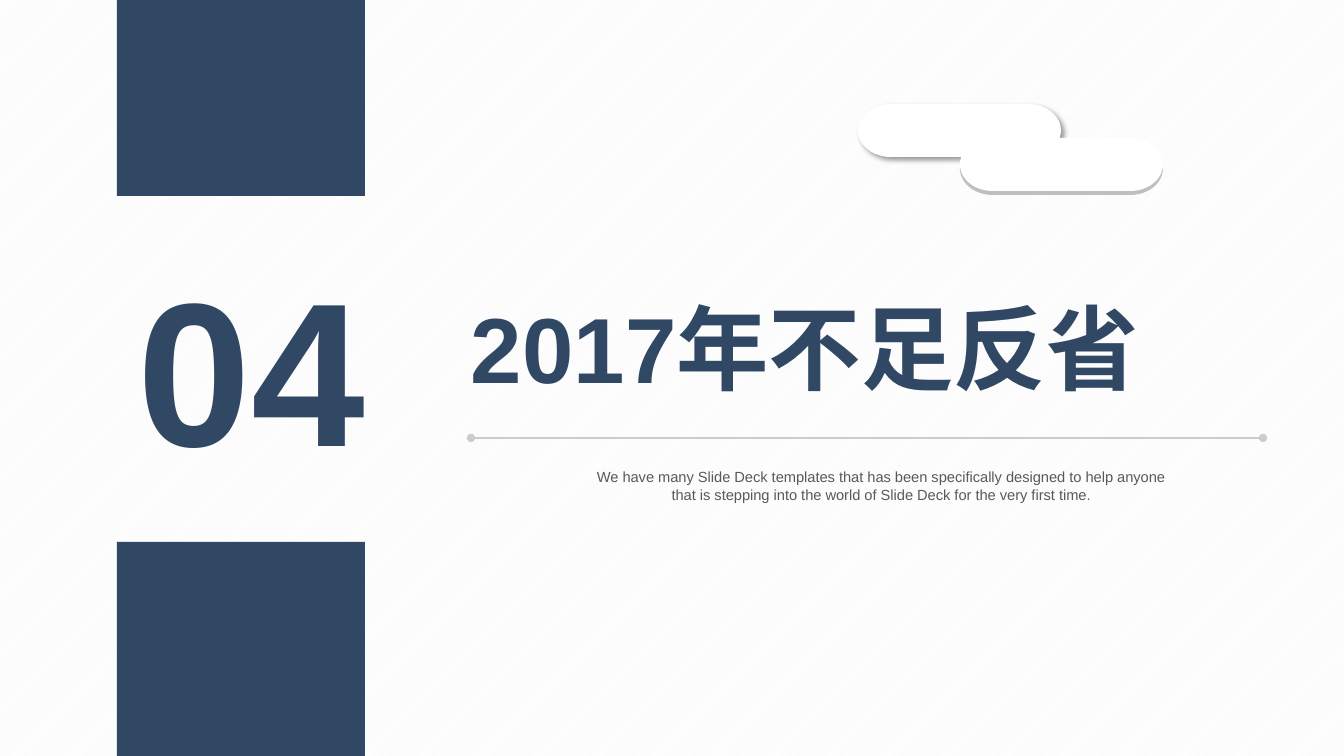
"""Build the section slide that opens chapter 04."""
from lxml import etree
from pptx import Presentation
from pptx.dml.color import RGBColor
from pptx.enum.dml import MSO_PATTERN
from pptx.enum.shapes import MSO_CONNECTOR, MSO_SHAPE
from pptx.enum.text import MSO_ANCHOR, MSO_AUTO_SIZE, PP_ALIGN
from pptx.oxml.ns import qn
from pptx.util import Emu, Pt

STRIPES = MSO_PATTERN.DARK_UPWARD_DIAGONAL
STRAIGHT = MSO_CONNECTOR.STRAIGHT
BAR, PILL = MSO_SHAPE.RECTANGLE, MSO_SHAPE.FLOWCHART_TERMINATOR
TOP, FIXED = MSO_ANCHOR.TOP, MSO_AUTO_SIZE.NONE
LEFT, CENTER, RIGHT = PP_ALIGN.JUSTIFY, PP_ALIGN.CENTER, PP_ALIGN.RIGHT

SLIDE_SIZE = 1344, 756
EMU_PER_PX = 12192000 / SLIDE_SIZE[0]
NAVY, WHITE, PALE, SILVER, RULE, GREY = (
    "314865", "FFFFFF", "F2F2F2", "BFBFBF", "CCCCCC", "595959")

CHAPTER = "04"
HEADING = "2017年不足反省"
SUMMARY = ("We have many Slide Deck templates that has been specifically designed "
           "to help anyone that is stepping into the world of Slide Deck "
           "for the very first time.")

COLUMN_LEFT, COLUMN_WIDTH = 117, 248
HEADING_LEFT, HEADING_WIDTH, RULE_TOP = 471, 792, 438
PILL_SIZE = 203, 53

TEXT_STYLES = {
    "chapter": ((COLUMN_LEFT, 242, COLUMN_WIDTH, 248), RIGHT, 146, NAVY, True),
    "heading": ((HEADING_LEFT, 291, HEADING_WIDTH, 112), LEFT, 66, NAVY, True),
    "summary": ((583, 468, 597, 35), CENTER, 10.5, GREY, False),
}
BARS = [(0, 196), (542, 214)]
CLOUD = [(960, 142, SILVER, False), (858, 104, WHITE, True), (960, 138, WHITE, False)]
FRAME_FORMAT = {"margin_left": 0, "margin_top": 0, "margin_right": 0,
                "margin_bottom": 0, "word_wrap": True,
                "auto_size": FIXED, "vertical_anchor": TOP}


def px(*lengths):
    return [Emu(round(length * EMU_PER_PX)) for length in lengths]


def color(value):
    return RGBColor.from_string(value)


def apply(target, values):
    for key, value in values.items():
        setattr(target, key, value)


def write(holder, words, style):
    box, align, size, ink, bold = TEXT_STYLES[style]
    apply(holder, dict(zip(("left", "top", "width", "height"), px(*box))))
    apply(holder.text_frame, FRAME_FORMAT)
    paragraph = holder.text_frame.paragraphs[0]
    apply(paragraph, {"alignment": align, "space_before": Pt(0), "line_spacing": 1.0})
    run = paragraph.add_run()
    run.text = words
    apply(run.font, {"name": "Arial", "size": Pt(size), "bold": bold})
    run.font.color.rgb = color(ink)


def add_block(shapes, preset, box, fill):
    block = shapes.add_shape(preset, *px(*box))
    block.shadow.inherit = False
    block.fill.solid()
    block.fill.fore_color.rgb = color(fill)
    block.line.fill.background()
    return block


def cast_shadow(pill):
    effects = pill._element.spPr.find(qn("a:effectLst"))
    shadow = etree.SubElement(effects, qn("a:outerShdw"), blurRad=str(Pt(4)),
                              dist=str(Pt(3)), dir="2700000", algn="tl",
                              rotWithShape="0")
    tint = etree.SubElement(shadow, qn("a:srgbClr"), val="000000")
    etree.SubElement(tint, qn("a:alpha"), val="40000")


def add_rule(shapes):
    rule = shapes.add_connector(STRAIGHT, *px(
        HEADING_LEFT, RULE_TOP, HEADING_LEFT + HEADING_WIDTH, RULE_TOP))
    rule.line.width = Pt(1)
    rule.line.color.rgb = color(RULE)
    for end in ("a:headEnd", "a:tailEnd"):
        etree.SubElement(rule.line._get_or_add_ln(), qn(end), type="oval")
    etree.SubElement(rule._element.spPr, qn("a:effectLst"))


def main():
    deck = Presentation()
    deck.slide_width, deck.slide_height = px(*SLIDE_SIZE)
    slide = deck.slides.add_slide(deck.slide_layouts[2])
    backdrop = slide.background.fill
    backdrop.patterned()
    backdrop.pattern = STRIPES
    backdrop.fore_color.rgb = color(PALE)
    backdrop.back_color.rgb = color(WHITE)

    write(slide.shapes.title, HEADING, "heading")
    write(slide.placeholders[1], SUMMARY, "summary")
    write(slide.shapes.add_textbox(0, 0, 0, 0), CHAPTER, "chapter")
    add_rule(slide.shapes)

    cloud = slide.shapes.add_group_shape()
    for left, top, fill, shaded in CLOUD:
        pill = add_block(cloud.shapes, PILL, (left, top, *PILL_SIZE), fill)
        if shaded:
            cast_shadow(pill)
    for top, height in BARS:
        add_block(slide.shapes, BAR, (COLUMN_LEFT, top, COLUMN_WIDTH, height), NAVY)
    deck.save("out.pptx")


if __name__ == "__main__":
    main()
